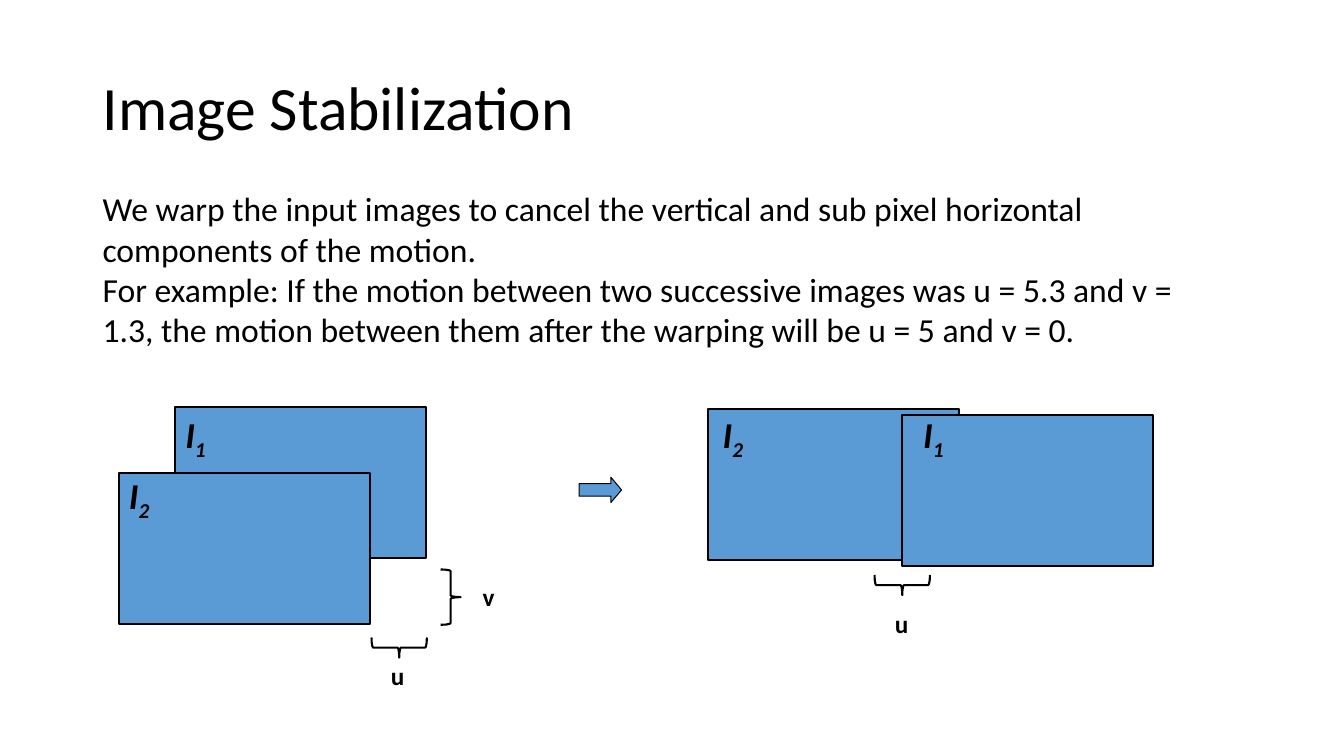
from pptx import Presentation
from pptx.dml.color import RGBColor
from pptx.enum.shapes import MSO_SHAPE
from pptx.enum.text import MSO_ANCHOR
from pptx.util import Inches, Pt

RECTANGLE = MSO_SHAPE.RECTANGLE
RIGHT_BRACE = MSO_SHAPE.RIGHT_BRACE
DOWN_ARROW = MSO_SHAPE.DOWN_ARROW
TOP, MIDDLE = MSO_ANCHOR.TOP, MSO_ANCHOR.MIDDLE

COLORS = {"ink": "000000", "frame": "5B9BD5"}
FONT = "Calibri"

presentation = Presentation()
presentation.slide_width = Inches(13.33)
presentation.slide_height = Inches(7.5)
slide = presentation.slides.add_slide(presentation.slide_layouts[6])

# The slide is a grid of 100 columns by 100 rows
COLUMN = presentation.slide_width / 100
ROW = presentation.slide_height / 100
MARGIN = 6.9
FRAME_SIZE = (18.68, 20)
LABEL_SIZE = (4.2, 7.2)
LETTER_SIZE = (2.55, 5.33)
BRACE_SIZE = (1.5, 7.33)


def add_figure(kind, left, top, size, rotation=0, fill=None, line_width=1.5):
    width, height = size
    shape = slide.shapes.add_shape(
        kind, int(left * COLUMN), int(top * ROW), int(width * COLUMN), int(height * ROW))
    shape.shadow.inherit = False
    shape.rotation = rotation
    if fill:
        shape.fill.solid()
        shape.fill.fore_color.rgb = RGBColor.from_string(COLORS[fill])
    else:
        shape.fill.background()
    shape.line.color.rgb = RGBColor.from_string(COLORS["ink"])
    shape.line.width = Pt(line_width)
    return shape


def add_text(left, top, size, paragraphs, format_values, wrap=True, anchor=TOP, spacing=1.0):
    """Add a text box; each paragraph is a list of runs, the second run a subscript."""
    width, height = size
    box = slide.shapes.add_textbox(
        int(left * COLUMN), int(top * ROW), int(width * COLUMN), int(height * ROW))
    frame = box.text_frame
    frame.word_wrap = wrap
    frame.vertical_anchor = anchor
    for index, texts in enumerate(paragraphs):
        paragraph = frame.add_paragraph() if index else frame.paragraphs[0]
        paragraph.line_spacing = spacing
        for position, text in enumerate(texts):
            run = paragraph.add_run()
            run.text = text
            run.font.color.rgb = RGBColor.from_string(COLORS["ink"])
            for name, value in {"name": FONT, **format_values}.items():
                setattr(run.font, name, value)
            if position:
                run.font._element.set("baseline", "-25000")


add_text(MARGIN, 4.93, (86.25, 19.33), [["Image Stabilization"]],
         {"size": Pt(44)}, anchor=MIDDLE, spacing=0.9)
add_text(MARGIN, 24.27, (85.35, 22.93), [
    ["We warp the input images to cancel the vertical and sub pixel horizontal "
     "components of the motion."],
    ["For example: If the motion between two successive images was u = 5.3 and v = 1.3, "
     "the motion between them after the warping will be u = 5 and v = 0."],
], {"size": Pt(24)})

# Image frames before and after warping, back to front
for left, top in [(13.05, 53.87), (8.85, 62.53), (52.65, 54.13), (67.13, 54.93)]:
    add_figure(RECTANGLE, left, top, FRAME_SIZE, fill="frame")

label_format = {"size": Pt(26), "bold": True, "italic": True}
for left, top, number in [(13.05, 53.87, "1"), (8.85, 61.87, "2"),
                          (53.03, 53.87, "2"), (67.95, 53.87, "1")]:
    add_text(left, top, LABEL_SIZE, [["I", number]], label_format)

# Braces measuring the motion components
for left, top, rotation in [(32.78, 75.33, 0), (28.95, 82, 90), (66.38, 73.73, 90)]:
    add_figure(RIGHT_BRACE, left, top, BRACE_SIZE, rotation)

letter_format = {"size": Pt(18), "bold": True}
for left, top, letter in [(28.35, 86.67, "u"), (35.18, 76.27, "v"), (65.85, 79.87, "u")]:
    add_text(left, top, LETTER_SIZE, [[letter]], letter_format, wrap=False)

warp_arrow = add_figure(DOWN_ARROW, 43.73, 62, (1.88, 5.6), 270, "frame", 0.75)
warp_arrow.adjustments[0] = 0.5
warp_arrow.adjustments[1] = 0.42

presentation.save("out.pptx")
